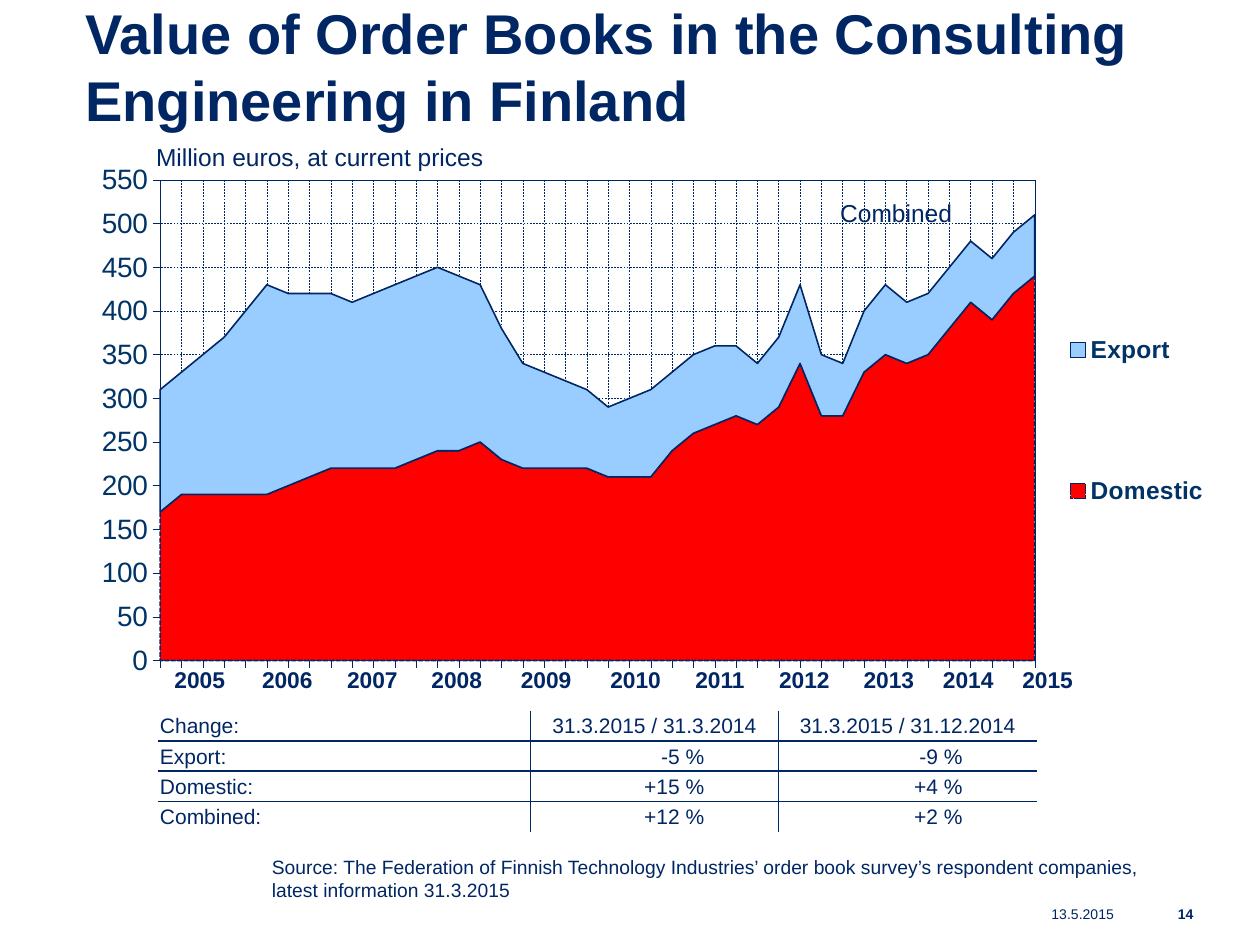
from dataclasses import dataclass

from lxml import etree
from pptx import Presentation
from pptx.chart.data import CategoryChartData
from pptx.dml.color import RGBColor
from pptx.enum.chart import XL_CHART_TYPE, XL_LEGEND_POSITION, XL_TICK_LABEL_POSITION, XL_TICK_MARK
from pptx.enum.dml import MSO_LINE
from pptx.enum.text import MSO_ANCHOR, PP_ALIGN
from pptx.oxml import parse_xml
from pptx.oxml.ns import nsdecls, qn
from pptx.util import Emu, Inches, Pt

LEFT, CENTER, RIGHT = PP_ALIGN.LEFT, PP_ALIGN.CENTER, PP_ALIGN.RIGHT
BOTTOM = MSO_ANCHOR.BOTTOM
SOLID, DASH, SHORT_DASH = MSO_LINE.SOLID, MSO_LINE.DASH, MSO_LINE.SQUARE_DOT
OUTSIDE, NO_TICK = XL_TICK_MARK.OUTSIDE, XL_TICK_MARK.NONE
NO_LABELS = XL_TICK_LABEL_POSITION.NONE
LEGEND_RIGHT = XL_LEGEND_POSITION.RIGHT
AREA_STACKED = XL_CHART_TYPE.AREA_STACKED
NO_STYLE = "{2D5ABB26-0587-4C30-8999-92F81FD0307C}"
COLUMNS, ROWS = 100, 75  # slide grid, one unit is a tenth of an inch


@dataclass(frozen=True)
class Theme:
    font: str = "Arial"
    navy: str = "002664"
    teal: str = "003366"
    red: str = "FF0000"
    sky: str = "99CCFF"
    title: float = 32
    axis: float = 16
    label: float = 14
    year: float = 13
    change: float = 12
    source: float = 11
    footer: float = 8


THEME = Theme()


@dataclass(frozen=True)
class Box:
    """A place on the slide, in grid columns and rows."""
    column: float
    row: float
    width: float
    height: float

    def place(self) -> tuple[Emu, Emu, Emu, Emu]:
        return grid(self.column), grid(self.row), grid(self.width), grid(self.height)


@dataclass(frozen=True)
class Label:
    lines: tuple[str, ...]
    box: Box
    size: float
    align: PP_ALIGN = LEFT
    bold: bool = False


@dataclass(frozen=True)
class Orders:
    name: str
    values: tuple[int, ...]
    color: str
    dash: MSO_LINE = SOLID


LABELS = (
    Label(("13.5.2015",), Box(61, 71.4, 28.4, 2.4), THEME.footer, RIGHT),
    Label(("Value of Order Books in the Consulting Engineering in Finland",),
          Box(5.8, -0.6, 90.4, 11.7), THEME.title, bold=True),
    Label(("Combined",), Box(65.7, 15.2, 13, 3.3), THEME.label),
    Label(("Million euros, at current prices",), Box(11.4, 10.8, 32, 3.3), THEME.label),
    Label(("Source: The Federation of Finnish Technology Industries’ order book survey’s "
           "respondent companies,", "latest information 31.3.2015"),
          Box(20.6, 67.4, 73, 6.5), THEME.source),
    Label(("14",), Box(89.4, 71.4, 6.3, 2.4), THEME.footer, RIGHT, bold=True),
)
ORDERS = (
    Orders("Domestic ", (
        170, 190, 190, 190, 190, 190, 200, 210, 220, 220, 220, 220, 230, 240,
        240, 250, 230, 220, 220, 220, 220, 210, 210, 210, 240, 260, 270, 280,
        270, 290, 340, 280, 280, 330, 350, 340, 350, 380, 410, 390, 420, 440), THEME.red, SHORT_DASH),
    Orders("Export", (
        140, 140, 160, 180, 210, 240, 220, 210, 200, 190, 200, 210, 210, 210,
        200, 180, 150, 120, 110, 100, 90, 80, 90, 100, 90, 90, 90, 80,
        70, 80, 90, 70, 60, 70, 80, 70, 70, 70, 70, 70, 70, 70), THEME.sky),
)
CHANGES = (
    ("Change:", "31.3.2015 / 31.3.2014", "31.3.2015 / 31.12.2014"),
    ("Export:", "-5 %", "-9 %"),
    ("Domestic:", "+15 %", "+4 %"),
    ("Combined:", "+12 %", "+2 %"),
)
YEARS = (tuple(str(year) for year in range(2005, 2016)),)
YEAR_WIDTHS = (6.7, 7.2, 6.3, 7.1, 7.1, 7.1, 6.3, 7.1, 6.3, 6.3, 6.3)


def grid(units: float) -> Emu:
    return Inches(units / 10)


def style_font(font, size: float, bold: bool = False, color: str = THEME.navy) -> None:
    font.name, font.size, font.bold = THEME.font, Pt(size), bold
    font.color.rgb = RGBColor.from_string(color)


def style_line(line, width: float, dash: MSO_LINE = SOLID) -> None:
    line.color.rgb = RGBColor.from_string(THEME.navy)
    line.width, line.dash_style = Pt(width), dash


def add_label(slide, label: Label) -> None:
    frame = slide.shapes.add_textbox(*label.box.place()).text_frame
    frame.word_wrap = True
    frame.text = "\n".join(label.lines)
    for paragraph in frame.paragraphs:
        paragraph.alignment = label.align
        style_font(paragraph.runs[0].font, label.size, label.bold)


def manual_layout(x: float, y: float, w: float, h: float, inner: bool = False):
    """Layout element in shares of the chart's size."""
    target = '<c:layoutTarget val="inner"/>' if inner else ""
    return parse_xml(
        f'<c:layout {nsdecls("c")}><c:manualLayout>{target}<c:xMode val="edge"/><c:yMode val="edge"/>'
        f'<c:x val="{x}"/><c:y val="{y}"/><c:w val="{w}"/><c:h val="{h}"/></c:manualLayout></c:layout>')


def add_order_chart(slide, box: Box) -> None:
    data = CategoryChartData(number_format="#,##0")
    data.categories = [str(quarter + 1) for quarter in range(len(ORDERS[0].values))]
    for orders in ORDERS:
        data.add_series(orders.name, orders.values)
    chart = slide.shapes.add_chart(AREA_STACKED, *box.place(), data).chart
    chart.has_title = False
    style_font(chart.font, THEME.label, bold=True)

    for series, orders in zip(chart.plots[0].series, ORDERS):
        series.format.fill.solid()
        series.format.fill.fore_color.rgb = RGBColor.from_string(orders.color)
        style_line(series.format.line, 0.9, orders.dash)

    quarters, euros = chart.category_axis, chart.value_axis
    for axis in (quarters, euros):
        axis.major_tick_mark, axis.minor_tick_mark = OUTSIDE, NO_TICK
        axis.has_major_gridlines = True
        style_line(axis.format.line, 0.23)
        style_line(axis.major_gridlines.format.line, 0.25, DASH)
    quarters.tick_label_position = NO_LABELS
    euros.minimum_scale, euros.maximum_scale, euros.major_unit = 0, 550, 50
    euros.tick_labels.number_format = "#,##0"
    euros.tick_labels.number_format_is_linked = False
    style_font(euros.tick_labels.font, THEME.axis, color=THEME.teal)

    chart.has_legend = True
    legend = chart.legend
    legend.position, legend.include_in_layout = LEGEND_RIGHT, False
    style_font(legend.font, THEME.label, bold=True, color=THEME.teal)

    plot_area = euros._element.getparent()
    euros._element.find(qn("c:crossBetween")).set("val", "midCat")
    for old in plot_area.findall(qn("c:layout")) + legend._element.findall(qn("c:layout")):
        old.getparent().remove(old)
    plot_area.insert(0, manual_layout(0.066, 0.063, 0.762, 0.863, inner=True))
    legend._element.find(qn("c:legendPos")).addnext(manual_layout(0.845, 0.14, 0.15, 0.71))
    plot_area.append(parse_xml(
        f'<c:spPr {nsdecls("c", "a")}><a:noFill/><a:ln w="{Pt(0.25)}"><a:solidFill>'
        f'<a:srgbClr val="{THEME.navy}"/></a:solidFill></a:ln></c:spPr>'))


def add_border(cell, side: str) -> None:
    line = etree.SubElement(cell._tc.get_or_add_tcPr(), qn(f"a:ln{side}"), w=str(Pt(1)))
    etree.SubElement(etree.SubElement(line, qn("a:solidFill")), qn("a:srgbClr"), val=THEME.navy)


def add_plain_table(slide, box: Box, rows, widths, size: float, bold: bool = False):
    table = slide.shapes.add_table(len(rows), len(widths), *box.place()).table
    table.first_row = table.horz_banding = False
    table._tbl.tblPr.find(qn("a:tableStyleId")).text = NO_STYLE
    for column, width in zip(table.columns, widths):
        column.width = grid(width)
    for r, row in enumerate(rows):
        for c, text in enumerate(row):
            cell = table.cell(r, c)
            cell.text = text
            paragraph = cell.text_frame.paragraphs[0]
            paragraph.alignment = CENTER
            style_font(paragraph.runs[0].font, size, bold)
            cell.fill.background()
    return table


def add_change_table(slide, box: Box) -> None:
    table = add_plain_table(slide, box, CHANGES, (29.6, 19.7, 20.5), THEME.change)
    last_row, last_column = len(CHANGES) - 1, len(CHANGES[0]) - 1
    for r in range(last_row + 1):
        for c in range(last_column + 1):
            cell = table.cell(r, c)
            is_value = r > 0 and c > 0
            cell.margin_left = cell.margin_top = cell.margin_bottom = grid(0.2)
            cell.margin_right = grid(5.9 if is_value else 0.2)
            cell.vertical_anchor = BOTTOM
            cell.text_frame.paragraphs[0].alignment = LEFT if c == 0 else RIGHT if is_value else CENTER
            cell._tc.tcPr.remove(cell._tc.tcPr.find(qn("a:noFill")))
            inner_edges = {"L": c > 0, "R": c < last_column, "T": r > 0, "B": r < last_row}
            for side in (side for side, inner in inner_edges.items() if inner):
                add_border(cell, side)
            cell.fill.background()


def main() -> None:
    deck = Presentation()
    deck.slide_width, deck.slide_height = grid(COLUMNS), grid(ROWS)
    slide = deck.slides.add_slide(deck.slide_layouts[6])
    add_order_chart(slide, Box(6.7, 11.5, 91.1, 44.2))
    for label in LABELS:
        add_label(slide, label)
    add_change_table(slide, Box(12.5, 56.4, 69.8, 9.6))
    add_plain_table(slide, Box(12.5, 52.5, sum(YEAR_WIDTHS), 4.7), YEARS, YEAR_WIDTHS, THEME.year, bold=True)
    deck.save("out.pptx")


if __name__ == "__main__":
    main()
